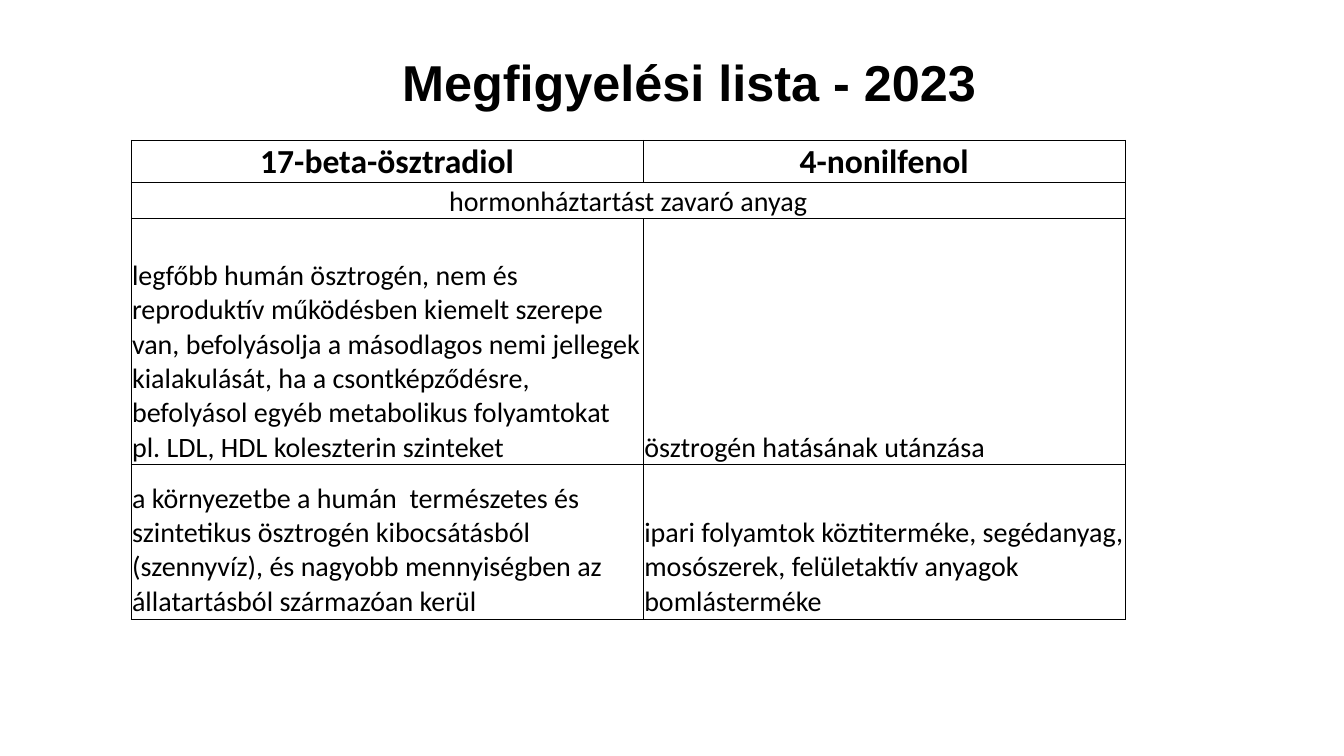
from lxml.etree import SubElement
from pptx import Presentation
from pptx.dml.color import RGBColor
from pptx.enum.text import MSO_ANCHOR, PP_ALIGN
from pptx.oxml.ns import qn
from pptx.util import Inches, Pt

# Content
TITLE = "Megfigyelési lista - 2023"
ROWS = [
    ("17-beta-ösztradiol", "4-nonilfenol"),
    ("hormonháztartást zavaró anyag",),
    ("legfőbb humán ösztrogén, nem és reproduktív működésben kiemelt szerepe van, "
     "befolyásolja a másodlagos nemi jellegek kialakulását, ha a csontképződésre, "
     "befolyásol egyéb metabolikus folyamtokat pl. LDL, HDL koleszterin szinteket",
     "ösztrogén hatásának utánzása"),
    ("a környezetbe a humán  természetes és szintetikus ösztrogén kibocsátásból "
     "(szennyvíz), és nagyobb mennyiségben az állatartásból származóan kerül",
     "ipari folyamtok köztiterméke, segédanyag, mosószerek, felületaktív anyagok "
     "bomlásterméke"),
]
COLUMN_WIDTHS = [5.08, 4.78]
ROW_HEIGHTS = [0.42, 0.36, 2.44, 1.53]
CENTRED_ROWS = 2
BLACK = "000000"


def color(value):
    return RGBColor.from_string(value)


def add_text(frame, text, font, size, bold, align):
    para = frame.paragraphs[0]
    para.alignment = align
    span = para.add_run()
    span.text = text
    span.font.name = font
    span.font.size = Pt(size)
    span.font.bold = bold
    span.font.color.rgb = color(BLACK)
    return para


def format_cell(cell):
    cell.vertical_anchor = MSO_ANCHOR.BOTTOM
    cell.margin_left = cell.margin_right = cell.margin_top = Inches(0.01)
    cell.margin_bottom = 0
    properties = cell._tc.get_or_add_tcPr()
    for side in ("a:lnL", "a:lnR", "a:lnT", "a:lnB"):
        border = SubElement(properties, qn(side), w=str(Pt(0.5)))
        fill = SubElement(border, qn("a:solidFill"))
        SubElement(fill, qn("a:srgbClr"), val=BLACK)
    cell.fill.background()


deck = Presentation()
deck.slide_width, deck.slide_height = Inches(13.33), Inches(7.5)
page = deck.slides.add_slide(deck.slide_layouts[6])

# Title
box = page.shapes.add_textbox(Inches(3.89), Inches(0.54), Inches(6.41), Inches(0.61))
box.text_frame.word_wrap = True
box.text_frame.vertical_anchor = MSO_ANCHOR.MIDDLE
add_text(box.text_frame, TITLE, "Arial", 36, True, PP_ALIGN.LEFT).line_spacing = 0.9

# Table
table = page.shapes.add_table(
    len(ROW_HEIGHTS), len(COLUMN_WIDTHS), Inches(1.3), Inches(1.39),
    Inches(sum(COLUMN_WIDTHS)), Inches(sum(ROW_HEIGHTS))).table
table.first_row = table.horz_banding = False
for column, width in zip(table.columns, COLUMN_WIDTHS):
    column.width = Inches(width)
for row, height in zip(table.rows, ROW_HEIGHTS):
    row.height = Inches(height)
for cell in table.iter_cells():
    format_cell(cell)

for row_index, texts in enumerate(ROWS):
    header = row_index == 0
    align = PP_ALIGN.CENTER if row_index < CENTRED_ROWS else PP_ALIGN.LEFT
    if len(texts) == 1:
        table.cell(row_index, 0).merge(table.cell(row_index, len(COLUMN_WIDTHS) - 1))
    for column_index, text in enumerate(texts):
        add_text(table.cell(row_index, column_index).text_frame, text,
                 "Calibri", 24 if header else 20, header, align)

deck.save("out.pptx")
